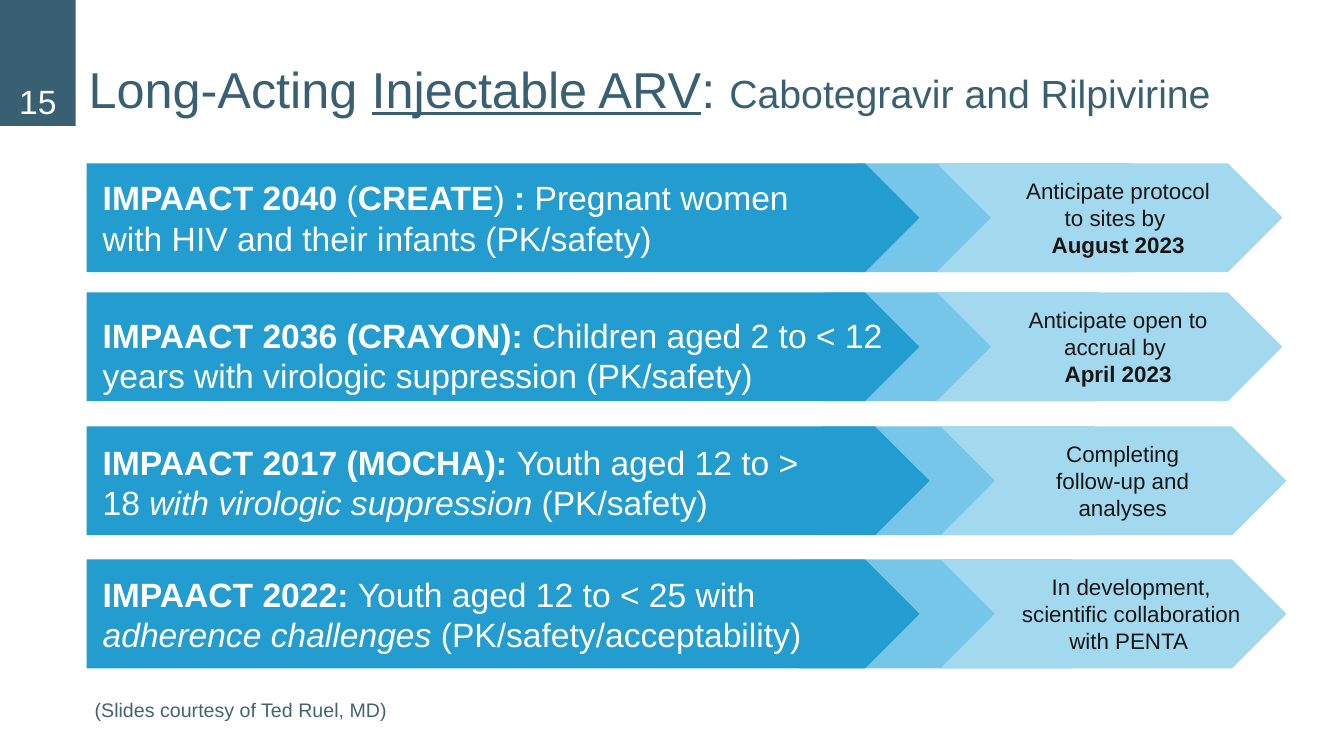
from pptx import Presentation
from pptx.dml.color import RGBColor
from pptx.enum.shapes import MSO_SHAPE as Shape
from pptx.enum.text import MSO_ANCHOR as Anchor, PP_ALIGN as Align
from pptx.util import Inches, Pt

SLATE, WHITE, INK, CREDIT = "386072", "FFFFFF", "171616", "44646C"
BAR, MIDDLE, LIGHT = "239CCF", "75C6E8", "A3D9EF"
BAR_LEFT, ROW_HEIGHT, MIDDLE_WIDTH, LIGHT_WIDTH = 0.86, 1.08, 3.25, 3.43
TEXT_LEFT, TEXT_HEIGHT = 0.92, 0.91
BOLD, ITALIC, UNDERLINE = {"bold": True}, {"italic": True}, {"underline": True}

STUDIES = [
    {
        "top": 1.62, "bar_width": 8.26, "middle_left": 8.51, "light_left": 9.29,
        "text_top": 1.71, "text_width": 7.09,
        "text": [("IMPAACT 2040 ", BOLD), ("(", {}), ("CREATE", BOLD), (") ", {}), (": ", BOLD),
                 ("Pregnant women with HIV and their infants (PK/safety)", {})],
        "status_left": 9.99, "status_width": 2.2,
        "status": [[("Anticipate protocol to sites by ", {})], [("August 2023", BOLD)]],
    },
    {
        "top": 2.9, "bar_width": 8.26, "middle_left": 8.18, "light_left": 9.29,
        "text_top": 3.07, "text_width": 8.36,
        "text": [("IMPAACT 2036 (CRAYON): ", BOLD),
                 ("Children aged 2 to < 12 years with virologic suppression (PK/safety)", {})],
        "status_left": 9.99, "status_width": 2.2,
        "status": [[("Anticipate open to accrual by ", {})], [("April 2023", BOLD)]],
    },
    {
        "top": 4.23, "bar_width": 8.36, "middle_left": 8.14, "light_left": 9.33,
        "text_top": 4.33, "text_width": 7.3,
        "text": [("IMPAACT 2017 (MOCHA): ", BOLD), ("Youth aged 12 to > 18 ", {}),
                 ("with virologic suppression ", ITALIC), ("(PK/safety)", {})],
        "status_left": 10.17, "status_width": 1.93,
        "status": [[("Completing follow-up and analyses", {})]],
    },
    {
        "top": 5.55, "bar_width": 8.26, "middle_left": 7.92, "light_left": 9.33,
        "text_top": 5.64, "text_width": 8.16,
        "text": [("IMPAACT 2022: ", BOLD), ("Youth aged 12 to < 25 with ", {}),
                 ("adherence challenges ", ITALIC), ("(PK/safety/acceptability)", {})],
        "status_left": 9.99, "status_width": 2.46,
        "status": [[("In development, scientific collaboration with PENTA ", {})]],
    },
]


def color(value):
    """Return the colour for a hex string."""
    return RGBColor.from_string(value)


def add_span(para, text, size, fill, bold=False, italic=False, underline=False):
    """Append formatted text to a paragraph."""
    span = para.add_run()
    span.text = text
    font = span.font
    font.name, font.size, font.color.rgb = "Arial", Pt(size), color(fill)
    font.bold, font.italic, font.underline = bold, italic, underline


def write(box, paragraphs, size, fill, align=Align.LEFT, anchor=Anchor.TOP, spacing=None):
    """Fill a shape with paragraphs of (text, format) spans."""
    frame = box.text_frame
    frame.word_wrap = True
    frame.vertical_anchor = anchor
    for index, spans in enumerate(paragraphs):
        para = frame.add_paragraph() if index else frame.paragraphs[0]
        para.alignment = align
        para.line_spacing = spacing
        for text, style in spans:
            add_span(para, text, **{"size": size, "fill": fill, **style})


def add_block(page, kind, left, top, width, height, fill):
    """Add a flat filled shape without an outline."""
    block = page.shapes.add_shape(kind, Inches(left), Inches(top), Inches(width), Inches(height))
    block.shadow.inherit = False
    block.fill.solid()
    block.fill.fore_color.rgb = color(fill)
    block.line.fill.background()
    return block


def add_text(page, left, top, width, height, paragraphs, **style):
    """Add a text box holding the given paragraphs."""
    box = page.shapes.add_textbox(Inches(left), Inches(top), Inches(width), Inches(height))
    write(box, paragraphs, **style)


def add_study(page, study):
    """Add one study row: arrows, description and status."""
    top = study["top"]
    add_block(page, Shape.CHEVRON, study["middle_left"], top, MIDDLE_WIDTH, ROW_HEIGHT, MIDDLE)
    add_block(page, Shape.PENTAGON, BAR_LEFT, top, study["bar_width"], ROW_HEIGHT, BAR)
    add_block(page, Shape.CHEVRON, study["light_left"], top, LIGHT_WIDTH, ROW_HEIGHT, LIGHT)
    add_text(page, TEXT_LEFT, study["text_top"], study["text_width"], TEXT_HEIGHT,
             [study["text"]], size=24, fill=WHITE)
    add_text(page, study["status_left"], top + 0.09, study["status_width"], TEXT_HEIGHT,
             study["status"], size=16, fill=INK, align=Align.CENTER)


def main():
    """Build the slide and save the deck."""
    deck = Presentation()
    deck.slide_width, deck.slide_height = Inches(13.33), Inches(7.5)
    page = deck.slides.add_slide(deck.slide_layouts[6])
    title = [("Long-Acting ", {}), ("Injectable ARV", UNDERLINE), (": ", {}),
             ("Cabotegravir and Rilpivirine", {"size": 28})]
    add_text(page, 0.78, -0.06, 12.04, 1.29, [title], size=36, fill=SLATE,
             anchor=Anchor.BOTTOM, spacing=0.9)
    number = add_block(page, Shape.RECTANGLE, 0, 0, 0.75, 1.25, SLATE)
    write(number, [[("15", {})]], size=24, fill=WHITE, align=Align.CENTER, anchor=Anchor.BOTTOM)
    for study in STUDIES:
        add_study(page, study)
    add_text(page, 0.84, 6.87, 6.68, 0.34, [[("(Slides courtesy of Ted Ruel, MD)", {})]],
             size=14, fill=CREDIT)
    deck.save("out.pptx")


if __name__ == "__main__":
    main()
